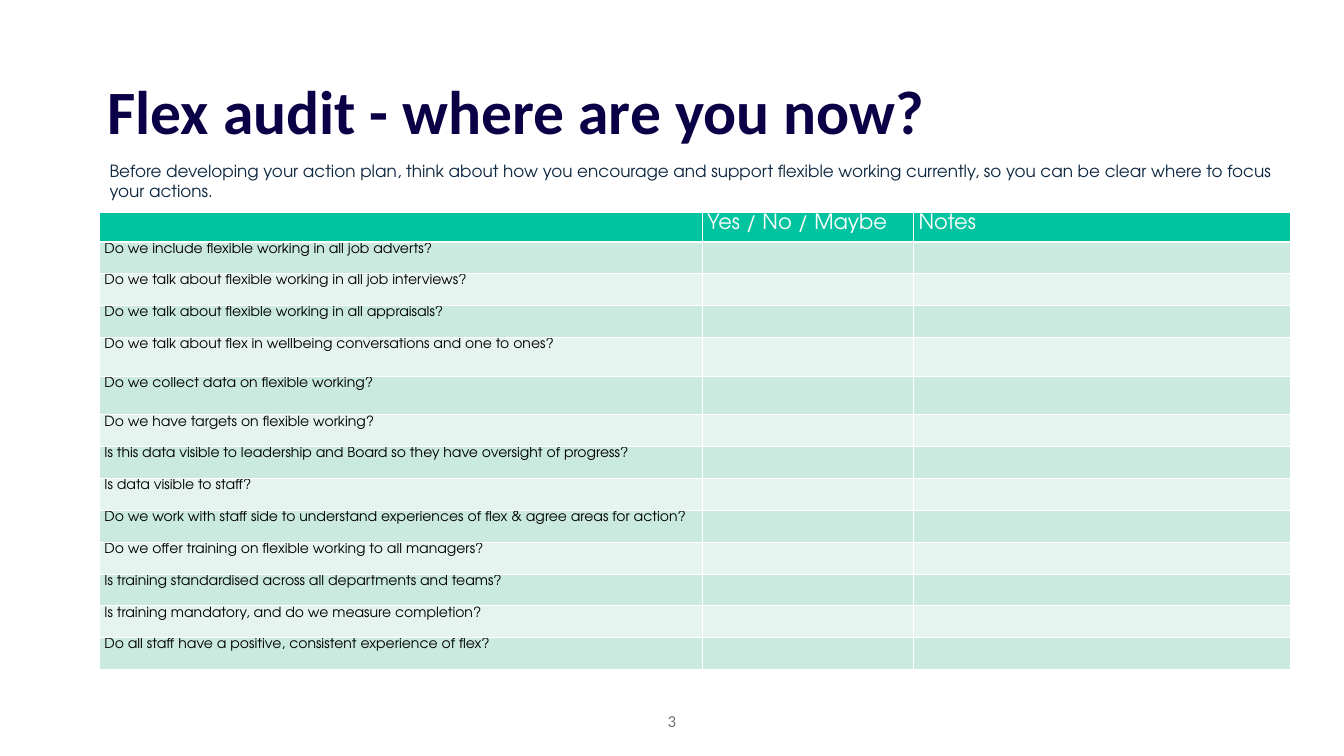
from pptx import Presentation
from pptx.dml.color import RGBColor
from pptx.enum.text import MSO_ANCHOR, PP_ALIGN
from pptx.oxml.ns import qn
from pptx.util import Inches, Pt
from lxml import etree

WIDE, HIGH = 26.66, 15
TOP, MIDDLE = MSO_ANCHOR.TOP, MSO_ANCHOR.MIDDLE
LEFT, CENTER = PP_ALIGN.LEFT, PP_ALIGN.CENTER
SANS, GEO = "Calibri", "TeX Gyre Adventor"
WHITE, GREEN = "FFFFFF", "00C3A0"
BANDS = ("CAE9DF", "E6F4F0")
COLS = (11.96, 4.19, 7.48)
ROW = 0.63
TALL = {0: 0.58, 4: 0.77, 5: 0.77, 9: 0.64}
HEADS = ("", "Yes / No / Maybe", "Notes")
ASKS = (
    "Do we include flexible working in all job adverts?",
    "Do we talk about flexible working in all job interviews?",
    "Do we talk about flexible working in all appraisals?",
    "Do we talk about flex in wellbeing conversations and one to ones?",
    "Do we collect data on flexible working?",
    "Do we have targets on flexible working?",
    "Is this data visible to leadership and Board so they have oversight of progress?",
    "Is data visible to staff?",
    "Do we work with staff side to understand experiences of flex & agree areas for action?",
    "Do we offer training on flexible working to all managers?",
    "Is training standardised across all departments and teams?",
    "Is training mandatory, and do we measure completion?",
    "Do all staff have a positive, consistent experience of flex?",
)


def color(code):
    return RGBColor.from_string(code)


def write(frame, words, size, face, code, bold=False, align=LEFT):
    frame.text = words
    line = frame.paragraphs[0]
    line.alignment = align
    font = line.font
    for run in line.runs:
        font = run.font
    font.size, font.name, font.bold = Pt(size), face, bold
    font.color.rgb = color(code)
    return line


def fit(frame, pads, anchor=TOP):
    frame.word_wrap = True
    frame.vertical_anchor = anchor
    (frame.margin_left, frame.margin_top,
     frame.margin_right, frame.margin_bottom) = map(Inches, pads)


def head(slide, box):
    title = slide.shapes.title
    title.left, title.top, title.width, title.height = map(Inches, box)
    fit(title.text_frame, (0, 0, 0, 0.05))
    line = write(title.text_frame, "Flex audit - where are you now?",
                 88, SANS, "090045", bold=True)
    line.line_spacing = 0.9


def note(slide, box, words, size, face, code, pads, anchor=TOP, align=LEFT):
    frame = slide.shapes.add_textbox(*map(Inches, box)).text_frame
    fit(frame, pads, anchor)
    return write(frame, words, size, face, code, align=align)


def edge(cell, side, width):
    props = cell._tc.get_or_add_tcPr()
    line = etree.SubElement(props, qn(f"a:{side}"), w=str(Pt(width)))
    fill = etree.SubElement(line, qn("a:solidFill"))
    etree.SubElement(fill, qn("a:srgbClr"), val=WHITE)


def paint(cell, words, size, ink, back, base):
    write(cell.text_frame, words, size, GEO, ink)
    cell.margin_top = cell.margin_bottom = Inches(0.02)
    for side in ("lnL", "lnR", "lnT"):
        edge(cell, side, 1)
    edge(cell, "lnB", base)
    cell.fill.solid()
    cell.fill.fore_color.rgb = color(back)


def audit(slide, left, top):
    rows = [HEADS] + [(ask, "", "") for ask in ASKS]
    highs = [TALL.get(i, ROW) for i in range(len(rows))]
    box = map(Inches, (left, top, sum(COLS), sum(highs)))
    table = slide.shapes.add_table(len(rows), len(COLS), *box).table
    for col, width in zip(table.columns, COLS):
        col.width = Inches(width)
    for i, (row, high, words) in enumerate(zip(table.rows, highs, rows)):
        row.height = Inches(high)
        style = (20, "000000", BANDS[(i - 1) % 2], 1) if i else (30, WHITE, GREEN, 3)
        for cell, text in zip(row.cells, words):
            paint(cell, text, *style)


def main():
    deck = Presentation()
    deck.slide_width, deck.slide_height = Inches(WIDE), Inches(HIGH)
    slide = deck.slides.add_slide(deck.slide_layouts[5])
    edge_x = WIDE * 0.08
    head(slide, (edge_x, 1.62, 23, 1.38))
    intro = note(
        slide, (edge_x, 3.18, 23.45, 1.69),
        "Before developing your action plan, think about how you encourage and "
        "support flexible working currently, so you can be clear where to focus "
        "your actions.", 24, GEO, "0E2841", (0, 0, 0, 0))
    intro._p.get_or_add_pPr().set("marL", str(Inches(0.04)))
    audit(slide, 1.97, 4.22)
    note(slide, (0, 13.9, WIDE, 0.8), "3", 24, SANS, "757575",
         (0.1, 0.05, 0.1, 0.05), MIDDLE, CENTER)
    deck.save("out.pptx")


if __name__ == "__main__":
    main()
